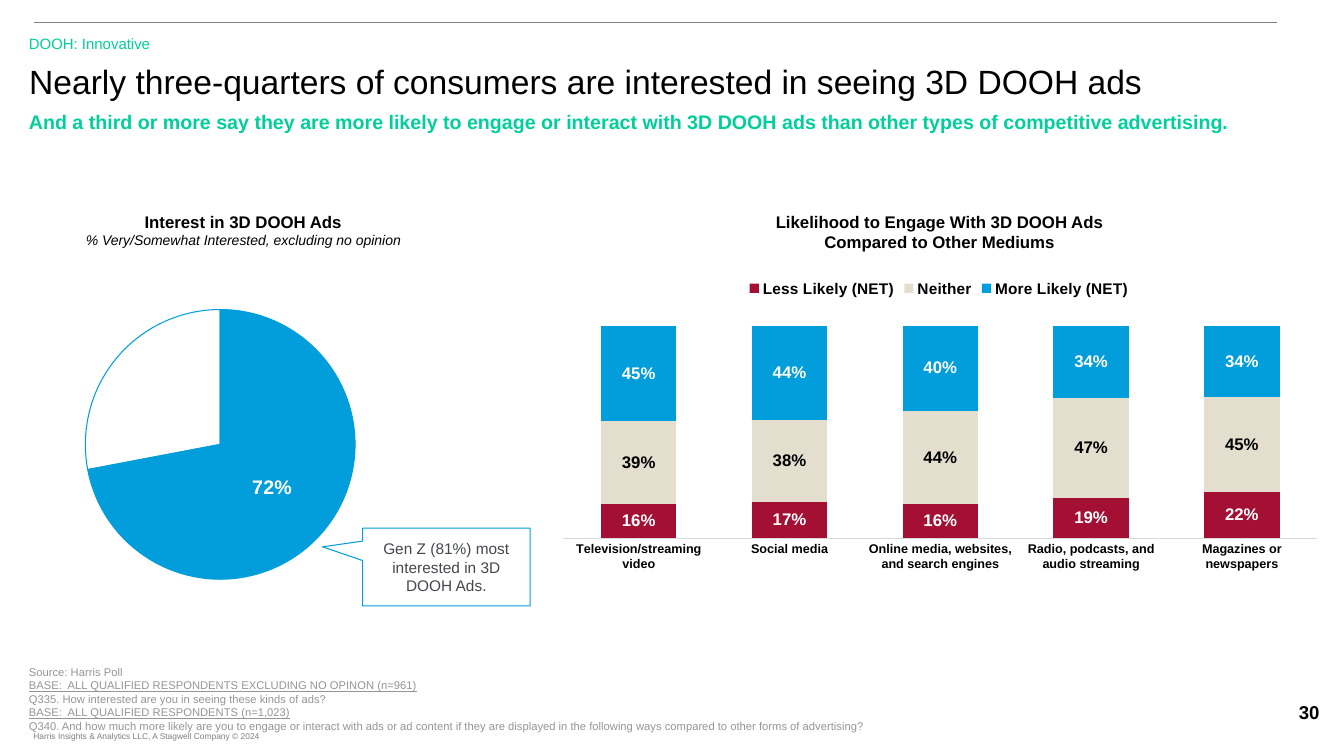
from dataclasses import dataclass

from lxml.etree import SubElement
from pptx import Presentation
from pptx.chart.chart import Chart
from pptx.chart.data import CategoryChartData
from pptx.dml.color import RGBColor
from pptx.enum.chart import (XL_CHART_TYPE, XL_LABEL_POSITION,
                             XL_LEGEND_POSITION, XL_TICK_MARK)
from pptx.enum.shapes import MSO_CONNECTOR, MSO_SHAPE
from pptx.enum.text import MSO_ANCHOR, PP_ALIGN
from pptx.oxml.ns import qn
from pptx.slide import Slide
from pptx.text.text import TextFrame
from pptx.util import Cm, Pt

FONT = "Arial"
COLOURS = {
    "black": "000000", "white": "FFFFFF", "green": "00CF9C", "blue": "019EDB",
    "red": "A31034", "sand": "E3DECE", "note": "939598", "copyright": "7F7F7F",
    "rule": "808080", "axis": "D9D9D9", "callout": "44474E",
}


@dataclass(frozen=True)
class Area:
    left: float
    top: float
    width: float
    height: float

    def lengths(self) -> tuple:
        return Cm(self.left), Cm(self.top), Cm(self.width), Cm(self.height)


@dataclass(frozen=True)
class Line:
    text: str
    size: float
    colour: str = "black"
    bold: bool = False
    italic: bool = False
    underline: bool = False


@dataclass(frozen=True)
class Block:
    area: Area
    lines: list[Line]
    align: PP_ALIGN = PP_ALIGN.LEFT
    left_inset: float = 0.25
    wrap: bool = True


@dataclass(frozen=True)
class Answer:
    name: str
    values: tuple
    colour: str
    label_colour: str


def rgb(name: str) -> RGBColor:
    return RGBColor.from_string(COLOURS[name])


def style_font(font, size: float, colour: str, bold: bool = False) -> None:
    font.name = FONT
    font.size = Pt(size)
    font.bold = bold
    font.color.rgb = rgb(colour)


def write(frame: TextFrame, lines: list[Line], align: PP_ALIGN, anchor: MSO_ANCHOR) -> None:
    frame.vertical_anchor = anchor
    for index, line in enumerate(lines):
        para = frame.add_paragraph() if index else frame.paragraphs[0]
        para.alignment = align
        span = para.add_run()
        span.text = line.text
        style_font(span.font, line.size, line.colour, line.bold)
        span.font.italic = line.italic
        span.font.underline = line.underline


def add_block(page: Slide, block: Block) -> None:
    frame = page.shapes.add_textbox(*block.area.lengths()).text_frame
    frame.word_wrap = block.wrap
    frame.margin_left = Cm(block.left_inset)
    write(frame, block.lines, block.align, MSO_ANCHOR.TOP)


def add_title(page: Slide, area: Area, line: Line) -> None:
    title = page.shapes.title
    title.left, title.top, title.width, title.height = area.lengths()
    write(title.text_frame, [line], PP_ALIGN.LEFT, MSO_ANCHOR.MIDDLE)


def add_rule(page: Slide, left: float, right: float, top: float) -> None:
    rule = page.shapes.add_connector(
        MSO_CONNECTOR.STRAIGHT, Cm(left), Cm(top), Cm(right), Cm(top))
    rule.line.color.rgb = rgb("rule")
    rule.line.width = Pt(0.5)
    SubElement(rule._element.spPr, qn("a:effectLst"))


def add_callout(page: Slide, area: Area, line: Line) -> None:
    callout = page.shapes.add_shape(MSO_SHAPE.RECTANGULAR_CALLOUT, *area.lengths())
    callout.adjustments[0] = -0.74
    callout.adjustments[1] = -0.26
    callout.shadow.inherit = False
    callout.fill.background()
    callout.line.color.rgb = rgb("blue")
    callout.line.width = Pt(0.75)
    callout.text_frame.word_wrap = True
    write(callout.text_frame, [line], PP_ALIGN.CENTER, MSO_ANCHOR.MIDDLE)


def place(parent, index: int, settings: dict) -> None:
    for old in parent.findall(qn("c:layout")):
        parent.remove(old)
    layout = SubElement(parent, qn("c:layout"))
    manual = SubElement(layout, qn("c:manualLayout"))
    for tag, value in settings.items():
        SubElement(manual, qn(f"c:{tag}")).set("val", str(value))
    parent.insert(index, layout)


def place_plot(chart: Chart, x: float, y: float, w: float, h: float) -> None:
    place(chart._chartSpace.chart.plotArea, 0, {
        "layoutTarget": "inner", "xMode": "edge", "yMode": "edge",
        "x": x, "y": y, "w": w, "h": h})


def add_chart(page: Slide, kind: XL_CHART_TYPE, area: Area, categories: list[str],
              answers: list[Answer], size: float) -> Chart:
    data = CategoryChartData(number_format="0%")
    data.categories = categories
    for answer in answers:
        data.add_series(answer.name, answer.values)
    chart = page.shapes.add_chart(kind, *area.lengths(), data).chart
    chart.has_title = False
    chart.has_legend = False
    style_font(chart.font, size, "black")
    chart.plots[0].vary_by_categories = False
    return chart


def add_interest_pie(page: Slide, area: Area) -> None:
    interest = Answer("Series 1", (0.72, 0.28), "blue", "white")
    chart = add_chart(page, XL_CHART_TYPE.PIE, area, ["1", "2"], [interest], 14)
    place_plot(chart, 0.04, 0.07, 0.95, 0.85)
    series = chart.plots[0].series[0]
    series.data_labels.show_value = False
    slices = [series.points[index] for index in range(len(interest.values))]
    for piece in slices:
        piece.format.line.color.rgb = rgb(interest.colour)
        piece.format.line.width = Pt(0.75)
    interested, others = slices
    interested.format.fill.solid()
    interested.format.fill.fore_color.rgb = rgb(interest.colour)
    others.format.fill.background()
    style_font(interested.data_label.font, 14, interest.label_colour, True)
    interested.data_label.position = XL_LABEL_POSITION.CENTER


def add_engagement_columns(page: Slide, area: Area, mediums: list[str],
                           answers: list[Answer]) -> None:
    chart = add_chart(page, XL_CHART_TYPE.COLUMN_STACKED_100, area, mediums, answers, 12)
    place_plot(chart, 0.005, 0.15, 0.978, 0.703)
    plot = chart.plots[0]
    plot.gap_width = 100
    plot.overlap = 100
    for series, answer in zip(plot.series, answers):
        series.format.fill.solid()
        series.format.fill.fore_color.rgb = rgb(answer.colour)
        labels = series.data_labels
        labels.show_value = True
        labels.number_format = "0%"
        labels.number_format_is_linked = False
        style_font(labels.font, 12, answer.label_colour, True)
    chart.value_axis.minimum_scale = -0.1
    chart.value_axis.maximum_scale = 1.1
    chart.value_axis.has_major_gridlines = False
    chart.value_axis.visible = False
    axis = chart.category_axis
    axis.major_tick_mark = XL_TICK_MARK.NONE
    axis.format.line.color.rgb = rgb("axis")
    axis.format.line.width = Pt(0.75)
    style_font(axis.tick_labels.font, 9, "black", True)
    chart.has_legend = True
    chart.legend.position = XL_LEGEND_POSITION.TOP
    chart.legend.include_in_layout = False
    style_font(chart.legend.font, 11, "black", True)
    place(chart.legend._element, 1, {"xMode": "edge", "yMode": "edge", "x": 0.24, "y": 0.07})


BLOCKS = [
    Block(Area(31.7, 17.53, 2.59, 0.84), [Line("30", 13.3, bold=True)], PP_ALIGN.CENTER),
    Block(Area(0.84, 18.29, 6.07, 0.51),
          [Line("Harris Insights & Analytics LLC, A Stagwell Company © 2024", 6, "copyright")],
          left_inset=0, wrap=False),
    Block(Area(0.48, 0.74, 16.94, 0.71), [Line("DOOH: Innovative", 10.7, "green")]),
    Block(Area(0.48, 2.64, 31.67, 1.04), [Line(
        "And a third or more say they are more likely to engage or interact with 3D DOOH ads "
        "than other types of competitive advertising.", 14, "green", bold=True)]),
    Block(Area(0.48, 16.64, 25.7, 2.31), [
        Line("Source: Harris Poll", 8, "note"),
        Line("BASE:  ALL QUALIFIED RESPONDENTS EXCLUDING NO OPINON (n=961)", 8, "note",
             underline=True),
        Line("Q335. How interested are you in seeing these kinds of ads?", 8, "note"),
        Line("BASE:  ALL QUALIFIED RESPONDENTS (n=1,023)", 8, "note", underline=True),
        Line("Q340. And how much more likely are you to engage or interact with ads or ad content "
             "if they are displayed in the following ways compared to other forms of advertising?",
             8, "note")]),
    Block(Area(-0.46, 5.21, 13.18, 1.19), [
        Line("Interest in 3D DOOH Ads", 12, bold=True),
        Line("% Very/Somewhat Interested, excluding no opinion", 10, italic=True)],
        PP_ALIGN.CENTER),
    Block(Area(17.09, 5.21, 13.18, 1.27), [
        Line("Likelihood to Engage With 3D DOOH Ads", 12, bold=True),
        Line("Compared to Other Mediums", 12, bold=True)], PP_ALIGN.CENTER),
]
MEDIUMS = ["Television/streaming video", "Social media",
           "Online media, websites, and search engines",
           "Radio, podcasts, and audio streaming", "Magazines or newspapers"]
ANSWERS = [
    Answer("Less Likely (NET)", (0.16, 0.17, 0.16, 0.19, 0.22), "red", "white"),
    Answer("Neither", (0.39, 0.38, 0.44, 0.47, 0.45), "sand", "black"),
    Answer("More Likely (NET)", (0.45, 0.44, 0.4, 0.34, 0.34), "blue", "white"),
]


def main() -> None:
    deck = Presentation()
    deck.slide_width, deck.slide_height = Cm(33.87), Cm(19.05)
    page = deck.slides.add_slide(deck.slide_layouts[5])
    add_rule(page, 0.86, 32.18, 0.56)
    add_title(page, Area(0.48, 1.45, 31.67, 1.19), Line(
        "Nearly three-quarters of consumers are interested in seeing 3D DOOH ads", 24))
    for block in BLOCKS:
        add_block(page, block)
    add_interest_pie(page, Area(1.04, 7.24, 8.76, 8))
    add_engagement_columns(page, Area(14.1, 6.3, 19.43, 9.14), MEDIUMS, ANSWERS)
    add_callout(page, Area(9.14, 13.31, 4.22, 1.96),
                Line("Gen Z (81%) most interested in 3D DOOH Ads.", 11, "callout"))
    deck.save("out.pptx")


if __name__ == "__main__":
    main()
